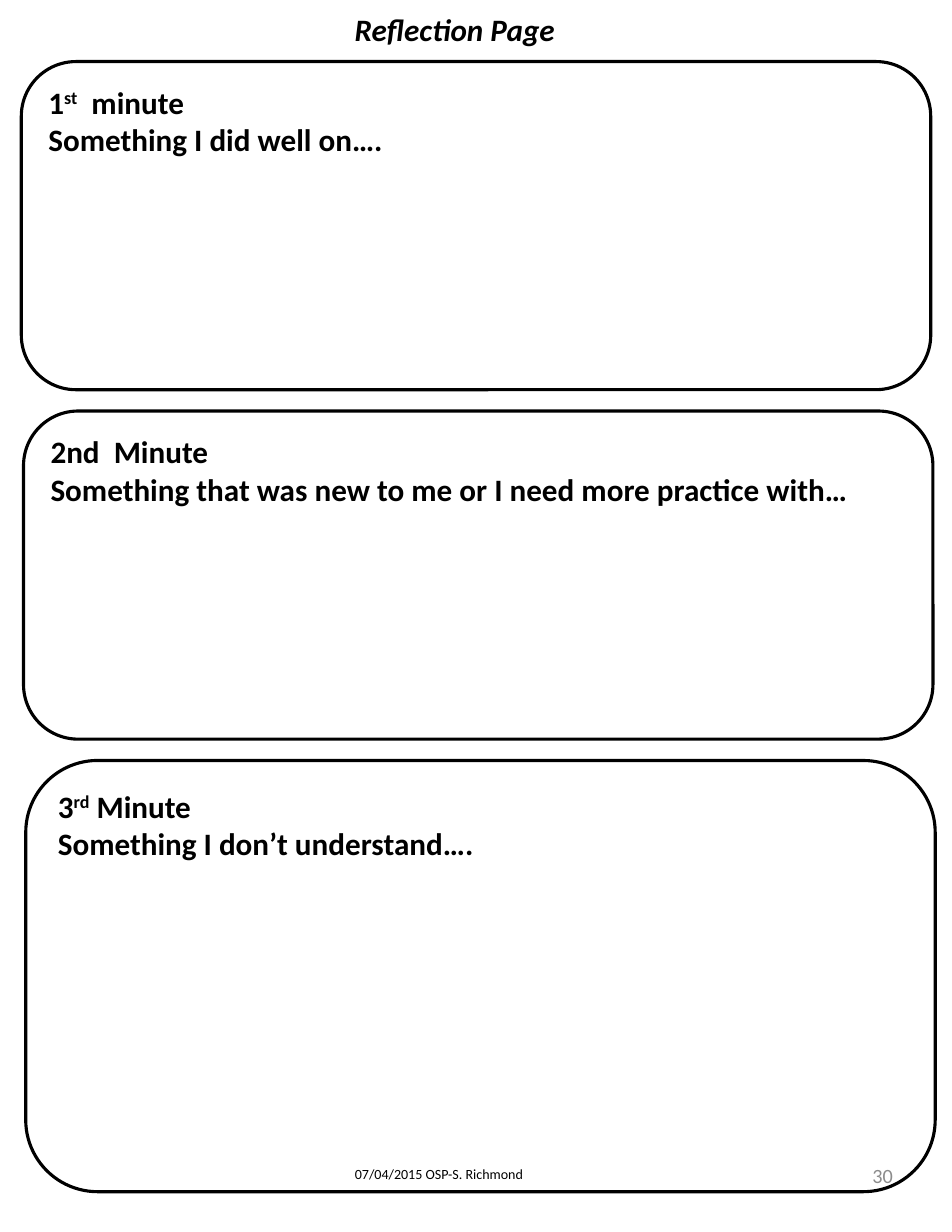
"""Build a reflection page with three rounded writing boxes."""
from pptx import Presentation
from pptx.dml.color import RGBColor
from pptx.enum.shapes import MSO_SHAPE
from pptx.enum.text import MSO_ANCHOR, PP_ALIGN
from pptx.util import Inches, Pt

ROUNDED = MSO_SHAPE.ROUNDED_RECTANGLE
TOP, MIDDLE = MSO_ANCHOR.TOP, MSO_ANCHOR.MIDDLE
LEFT, CENTER, RIGHT = PP_ALIGN.LEFT, PP_ALIGN.CENTER, PP_ALIGN.RIGHT
BLACK = RGBColor(0x00, 0x00, 0x00)
GRAY = RGBColor(0x8C, 0x8C, 0x8C)
FONT = "Calibri"

TITLE = "Reflection Page"
FOOTER = "07/04/2015 OSP-S. Richmond"
PAGE_NUMBER = "30"
MINUTES = [
    (("1", "st", "  minute"), "Something I did well on….", 2.93),
    (("2nd  Minute",), "Something that was new to me or I need more practice with…", 2.93),
    (("3", "rd", " Minute"), "Something I don’t understand….", 3.85),
]
FIRST_LEFT, FIRST_TOP, BOX_WIDTH = 0.19, 0.55, 8.12
LEFT_STEP, GAP = 0.02, 0.19


def style(paragraph, size, color=BLACK, align=LEFT, bold=False, italic=False):
    paragraph.alignment = align
    font = paragraph.font
    font.name, font.size, font.bold, font.italic = FONT, Pt(size), bold, italic
    font.color.rgb = color


def add_text(page, text, place, size, anchor=TOP, **looks):
    frame = page.shapes.add_textbox(*map(Inches, place)).text_frame
    frame.word_wrap = True
    frame.vertical_anchor = anchor
    paragraph = frame.paragraphs[0]
    paragraph.add_run().text = text
    style(paragraph, size, **looks)


def add_minute(page, heading, prompt, place):
    box = page.shapes.add_shape(ROUNDED, *map(Inches, place))
    box.shadow.inherit = False
    box.fill.background()
    box.line.color.rgb = BLACK
    box.line.width = Pt(2)
    frame = box.text_frame
    frame.word_wrap = True
    frame.vertical_anchor = TOP
    first, second = frame.paragraphs[0], frame.add_paragraph()
    for index, text in enumerate(heading):
        span = first.add_run()
        span.text = text
        if index == 1:
            span.font._element.set("baseline", "30000")
    second.add_run().text = prompt
    for paragraph in (first, second):
        style(paragraph, 20, bold=True)


def main():
    deck = Presentation()
    deck.slide_width, deck.slide_height = Inches(8.5), Inches(11)
    page = deck.slides.add_slide(deck.slide_layouts[6])
    add_text(page, FOOTER, (3.07, 10.36, 2.69, 0.59), 9)
    add_text(page, PAGE_NUMBER, (6.09, 10.2, 1.98, 0.59), 13, MIDDLE, color=GRAY, align=RIGHT)
    top = FIRST_TOP
    for index, (heading, prompt, height) in enumerate(MINUTES):
        left = FIRST_LEFT + index * LEFT_STEP
        add_minute(page, heading, prompt, (left, top, BOX_WIDTH, height))
        top += height + GAP
    add_text(page, TITLE, (0.85, 0.04, 6.42, 0.44), 20, align=CENTER, bold=True, italic=True)
    deck.save("out.pptx")


if __name__ == "__main__":
    main()
